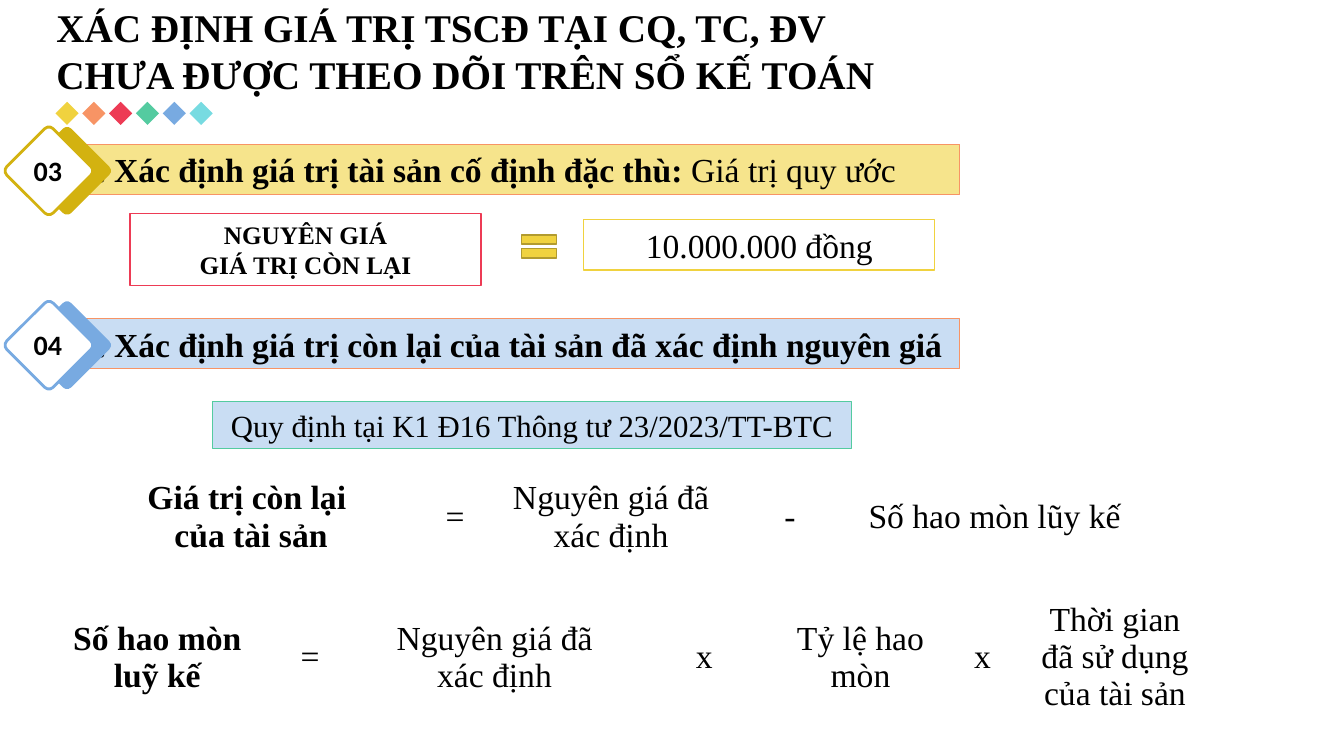
import pptx
import pptx.util
import pptx.dml.color
import pptx.enum.shapes
import pptx.enum.text

Inches = pptx.util.Inches
SHAPES = pptx.enum.shapes.MSO_SHAPE
ALIGN = pptx.enum.text.PP_ALIGN
ANCHOR = pptx.enum.text.MSO_ANCHOR

COLORS = {
    "black": "000000", "white": "FFFFFF", "yellow": "F0D23F", "orange": "F79465",
    "red": "ED3B55", "green": "54CBA0", "blue": "78AAE1", "cyan": "77DBE1",
    "gold": "D3B210", "olive": "B29B2F", "pale_yellow": "F6E48C", "pale_blue": "C9DDF3",
}
TITLE = "XÁC ĐỊNH GIÁ TRỊ TSCĐ TẠI CQ, TC, ĐV CHƯA ĐƯỢC THEO DÕI TRÊN SỔ KẾ TOÁN"
DIAMONDS = ["yellow", "orange", "red", "green", "blue", "cyan"]
SECTIONS = [
    (1.43, "03", "gold", "pale_yellow",
     [("2. Xác định giá trị tài sản cố định đặc thù: ", True), ("Giá trị quy ước", False)]),
    (3.16, "04", "blue", "pale_blue",
     [("2. Xác định giá trị còn lại của tài sản đã xác định nguyên giá", True)]),
]
BOXES = [
    ((1.29, 2.12, 3.48, 0.71), "white", "red", 1, 18,
     [[("NGUYÊN GIÁ", True)], [("GIÁ TRỊ CÒN LẠI", True)]]),
    ((5.79, 2.18, 3.48, 0.5), "white", "yellow", 1, 24, [[("10.000.000 đồng", False)]]),
    ((2.11, 3.98, 6.33, 0.47), "pale_blue", "green", 0.5, 22,
     [[("Quy định tại K1 Đ16 Thông tư 23/2023/TT-BTC", False)]]),
]
FORMULAS = [
    ((0.81, 4.6), 1.06, (0.08, 0), [
        (3.36, ["Giá trị còn lại ", "của tài sản"]), (0.69, ["="]),
        (2.4, ["Nguyên giá đã xác định"]), (1.15, ["-"]), (2.91, ["Số hao mòn lũy kế"])]),
    ((0.58, 5.87), 1.3, (0.1, 0.05), [
        (1.96, ["Số hao mòn luỹ kế"]), (1.07, ["="]), (2.59, ["Nguyên giá đã xác định"]),
        (1.57, ["x"]), (1.53, ["Tỷ lệ hao mòn"]), (0.89, ["x"]),
        (1.74, ["Thời gian đã sử dụng của tài sản"])]),
]

presentation = pptx.Presentation()
presentation.slide_width = Inches(13.33)
presentation.slide_height = Inches(7.5)
slide = presentation.slides.add_slide(presentation.slide_layouts[6])


def rgb(name):
    return pptx.dml.color.RGBColor.from_string(COLORS[name])


def write_text(frame, paragraphs, size=24, font="Times New Roman", align=ALIGN.CENTER):
    frame.word_wrap = True
    for index, runs in enumerate(paragraphs):
        paragraph = frame.add_paragraph() if index else frame.paragraphs[0]
        paragraph.alignment = align
        for text, bold in runs:
            run = paragraph.add_run()
            run.text = text
            run.font.size = pptx.util.Pt(size)
            run.font.name = font
            run.font.bold = bold
            run.font.color.rgb = rgb("black")


def add_shape(kind, place, fill, line=None, width=1):
    shape = slide.shapes.add_shape(kind, *map(Inches, place))
    shape.shadow.inherit = False
    shape.fill.solid()
    shape.fill.fore_color.rgb = rgb(fill)
    if line:
        shape.line.color.rgb = rgb(line)
        shape.line.width = pptx.util.Pt(width)
    else:
        shape.line.fill.background()
    return shape


def add_text_box(place, paragraphs, **style):
    box = slide.shapes.add_textbox(*map(Inches, place))
    write_text(box.text_frame, paragraphs, **style)


def add_section(top, number, color, fill, runs):
    bar = add_shape(SHAPES.RECTANGLE, (0.7, top, 8.82, 0.5), fill, "orange", 0.5)
    write_text(bar.text_frame, [runs], align=ALIGN.LEFT)
    for left, inside, line in [(0.34, color, None), (0.16, "white", color)]:
        badge = add_shape(SHAPES.ROUNDED_RECTANGLE, (left, top - 0.06, 0.65, 0.65),
                          inside, line, 2)
        badge.adjustments[0] = 0.09
        badge.rotation = 45
    add_text_box((0.23, top + 0.04, 0.49, 0.44), [[(number, True)]], size=20, font="Calibri")


def add_formula(corner, height, margins, columns):
    widths = [width for width, lines in columns]
    place = (*corner, sum(widths), height)
    table = slide.shapes.add_table(1, len(columns), *map(Inches, place)).table
    table.first_row = False
    table.horz_banding = False
    for index, (width, lines) in enumerate(columns):
        table.columns[index].width = Inches(width)
        cell = table.cell(0, index)
        cell.fill.background()
        cell.vertical_anchor = ANCHOR.MIDDLE
        cell.margin_left = cell.margin_right = Inches(margins[0])
        cell.margin_top = cell.margin_bottom = Inches(margins[1])
        write_text(cell.text_frame, [[(line, index == 0)] for line in lines])


add_text_box((0.46, -0.02, 9.05, 1.04), [[(TITLE, True)]], size=28, align=ALIGN.LEFT)
for index, color in enumerate(DIAMONDS):
    add_shape(SHAPES.DIAMOND, (0.55 + index * 0.266, 1.01, 0.23, 0.23), color)
for section in SECTIONS:
    add_section(*section)
for place, fill, line, width, size, paragraphs in BOXES:
    box = add_shape(SHAPES.RECTANGLE, place, fill, line, width)
    write_text(box.text_frame, paragraphs, size=size)
add_shape(SHAPES.MATH_EQUAL, (5.11, 2.25, 0.47, 0.39), "yellow", "olive")
for formula in FORMULAS:
    add_formula(*formula)

presentation.save("out.pptx")
